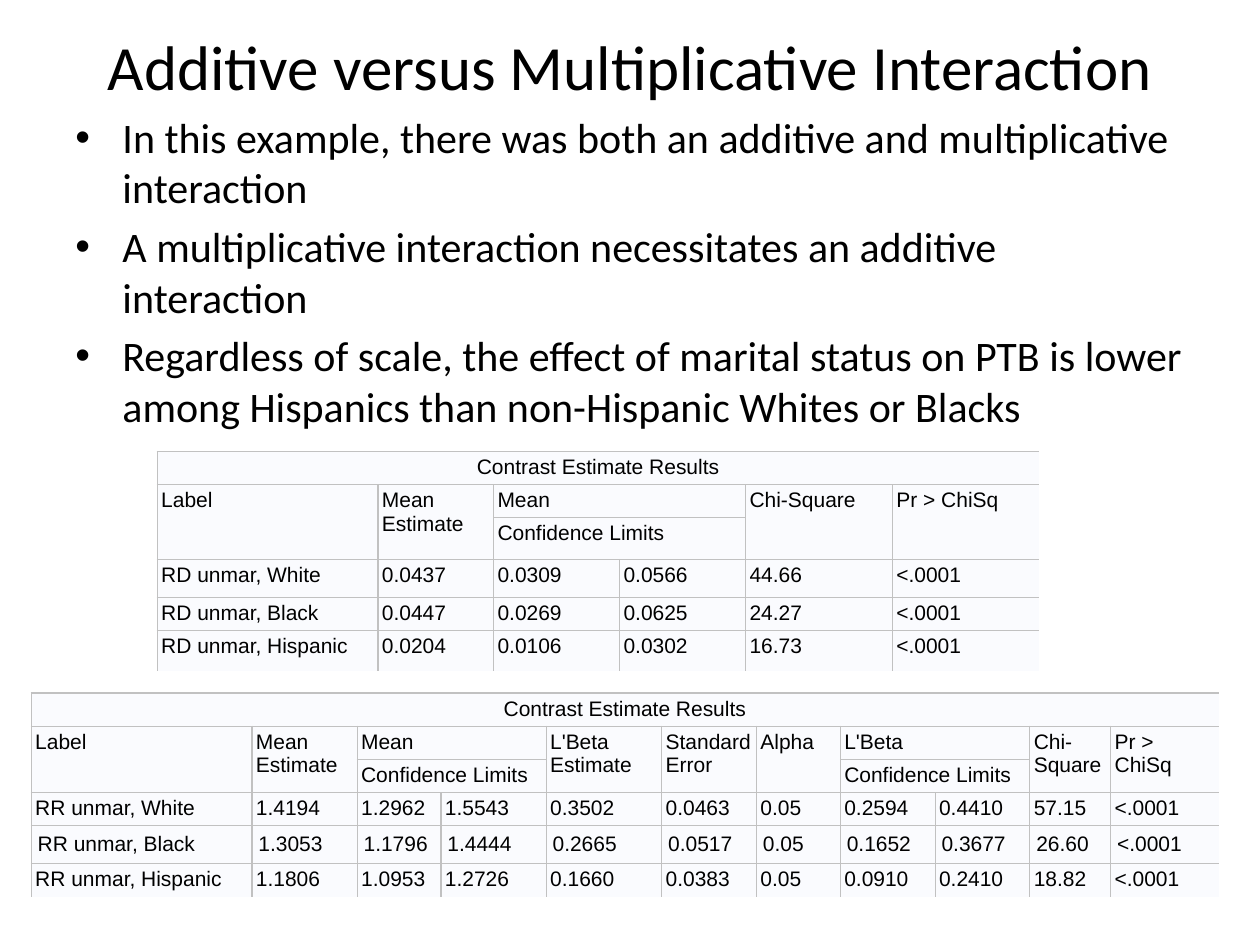
"""Build the slide on additive versus multiplicative interaction."""
from dataclasses import dataclass

from lxml.etree import SubElement
from pptx import Presentation
from pptx.dml.color import RGBColor as Rgb
from pptx.enum.text import PP_ALIGN as Align
from pptx.oxml.ns import qn
from pptx.util import Cm, Pt


@dataclass(frozen=True)
class Theme:
    """Colours, fonts and type sizes of the slide."""
    ink: str = "000000"
    cell: str = "FAFBFE"
    rule: str = "C1C1C1"
    rule_width: float = 0.75
    prose_font: str = "Calibri"
    table_font: str = "Arial"
    title_size: int = 36
    bullet_size: int = 24
    table_size: int = 12


@dataclass(frozen=True)
class Heading:
    """A column heading, with confidence limits below it if it spans two columns."""
    name: str
    columns: int = 1


@dataclass(frozen=True)
class Results:
    """A table of contrast estimates, with lengths in centimetres."""
    left: float
    top: float
    widths: tuple[float, ...]
    heights: tuple[float, ...]
    headings: tuple[Heading, ...]
    estimates: tuple[tuple[str, ...], ...]
    roomy_row: int | None = None


THEME = Theme()
TITLE = "Additive versus Multiplicative Interaction"
BULLETS = (
    "In this example, there was both an additive and multiplicative interaction",
    "A multiplicative interaction necessitates an additive interaction",
    "Regardless of scale, the effect of marital status on PTB is lower "
    "among Hispanics than non-Hispanic Whites or Blacks",
)
CAPTION = "Contrast Estimate Results"
LIMITS = "Confidence Limits"
HANGING = Cm(0.95)
INSET, ROOMY_INSET = Cm(0.08), Cm(0.13)

LABEL = Heading("Label")
ESTIMATE = Heading("Mean Estimate")
MEAN = Heading("Mean", 2)
CHI_SQUARE = Heading("Chi-Square")
P_VALUE = Heading("Pr > ChiSq")

RISK_RATIOS = Results(
    0.63, 13.97,
    (4.45, 2.12, 1.69, 2.12, 2.33, 1.91, 1.69, 1.91, 1.91, 1.63, 2.18),
    (0.64, 0.64, 0.56, 0.66, 0.64, 0.64),
    (LABEL, ESTIMATE, MEAN, Heading("L'Beta Estimate"), Heading("Standard Error"),
     Heading("Alpha"), Heading("L'Beta", 2), CHI_SQUARE, P_VALUE),
    (
        ("RR unmar, White", "1.4194", "1.2962", "1.5543", "0.3502", "0.0463",
         "0.05", "0.2594", "0.4410", "57.15", "<.0001"),
        ("RR unmar, Black", "1.3053", "1.1796", "1.4444", "0.2665", "0.0517",
         "0.05", "0.1652", "0.3677", "26.60", "<.0001"),
        ("RR unmar, Hispanic", "1.1806", "1.0953", "1.2726", "0.1660", "0.0383",
         "0.05", "0.0910", "0.2410", "18.82", "<.0001"),
    ),
    roomy_row=4,
)
RISK_DIFFERENCES = Results(
    3.17, 9.1,
    (4.45, 2.33, 2.54, 2.54, 2.96, 2.96),
    (0.46, 0.66, 0.84, 0.77, 0.64, 0.81),
    (LABEL, ESTIMATE, MEAN, CHI_SQUARE, P_VALUE),
    (
        ("RD unmar, White", "0.0437", "0.0309", "0.0566", "44.66", "<.0001"),
        ("RD unmar, Black", "0.0447", "0.0269", "0.0625", "24.27", "<.0001"),
        ("RD unmar, Hispanic", "0.0204", "0.0106", "0.0302", "16.73", "<.0001"),
    ),
)


def style_runs(paragraph, font: str, size: int) -> None:
    """Give every run of a paragraph its font, size and colour."""
    for run in paragraph.runs:
        run.font.name = font
        run.font.size = Pt(size)
        run.font.color.rgb = Rgb.from_string(THEME.ink)


def hang(paragraph, bullet: str | None = None) -> None:
    """Indent a paragraph with a hanging first line and an optional bullet."""
    properties = paragraph._p.get_or_add_pPr()
    properties.set("marL", str(HANGING))
    properties.set("indent", str(-HANGING))
    if bullet:
        SubElement(properties, qn("a:buFont"), typeface="Arial")
        SubElement(properties, qn("a:buChar"), char=bullet)


def add_prose(slide) -> None:
    """Add the title line and the bullets below it."""
    frame = slide.shapes.add_textbox(Cm(1.27), Cm(0.43), Cm(22.86), Cm(16.59)).text_frame
    frame.word_wrap = True
    title = frame.paragraphs[0]
    title.text = TITLE
    title.alignment = Align.CENTER
    hang(title)
    style_runs(title, THEME.prose_font, THEME.title_size)
    for statement in BULLETS:
        point = frame.add_paragraph()
        point.text = statement
        point.space_before = Pt(THEME.bullet_size * 0.2)
        hang(point, "•")
        style_runs(point, THEME.prose_font, THEME.bullet_size)


def rule_cell(cell, open_sides: set[str]) -> None:
    """Draw the rules around a cell, leaving the open sides bare."""
    properties = cell._tc.get_or_add_tcPr()
    for side in "LRTB":
        line = SubElement(properties, qn(f"a:ln{side}"), w=str(Pt(THEME.rule_width)))
        if side in open_sides:
            SubElement(line, qn("a:noFill"))
        else:
            fill = SubElement(line, qn("a:solidFill"))
            SubElement(fill, qn("a:srgbClr"), val=THEME.rule)


def fill_headings(grid, headings: tuple[Heading, ...]) -> None:
    """Write the caption and headings and merge the cells they cover."""
    grid.cell(0, 0).merge(grid.cell(0, len(grid.columns) - 1))
    grid.cell(0, 0).text = CAPTION
    grid.cell(0, 0).text_frame.paragraphs[0].alignment = Align.CENTER
    column = 0
    for heading in headings:
        last = column + heading.columns - 1
        if heading.columns > 1:
            for row in (1, 2):
                grid.cell(row, column).merge(grid.cell(row, last))
            grid.cell(2, column).text = LIMITS
        else:
            grid.cell(1, column).merge(grid.cell(2, column))
        grid.cell(1, column).text = heading.name
        column = last + 1


def style_cell(cell, inset: int, open_sides: set[str]) -> None:
    """Set the insets, rules, fill and type of a cell."""
    cell.margin_left = cell.margin_right = inset
    cell.margin_top = cell.margin_bottom = inset
    rule_cell(cell, open_sides)
    cell.fill.solid()
    cell.fill.fore_color.rgb = Rgb.from_string(THEME.cell)
    for paragraph in cell.text_frame.paragraphs:
        paragraph.font.size = Pt(THEME.table_size)
        style_runs(paragraph, THEME.table_font, THEME.table_size)


def add_results(slide, results: Results) -> None:
    """Add one table of contrast estimates."""
    rows, columns = len(results.heights), len(results.widths)
    grid = slide.shapes.add_table(
        rows, columns, Cm(results.left), Cm(results.top),
        Cm(sum(results.widths)), Cm(sum(results.heights))).table
    grid.first_row = grid.horz_banding = False
    for column, width in zip(grid.columns, results.widths):
        column.width = Cm(width)
    for row, height in zip(grid.rows, results.heights):
        row.height = Cm(height)
    fill_headings(grid, results.headings)
    for r, estimate in enumerate(results.estimates, start=3):
        for c, value in enumerate(estimate):
            grid.cell(r, c).text = value
    for r in range(rows):
        for c in range(columns):
            cell = grid.cell(r, c)
            reach = c + (cell.span_width if cell.is_merge_origin else 1)
            open_sides = {"R"} if reach == columns else set()
            if r == rows - 1:
                open_sides.add("B")
            style_cell(cell, ROOMY_INSET if r == results.roomy_row else INSET, open_sides)


def main() -> None:
    """Build and save the slide."""
    deck = Presentation()
    deck.slide_width, deck.slide_height = Cm(25.4), Cm(19.05)
    slide = deck.slides.add_slide(deck.slide_layouts[6])
    add_prose(slide)
    for results in (RISK_RATIOS, RISK_DIFFERENCES):
        add_results(slide, results)
    deck.save("out.pptx")


if __name__ == "__main__":
    main()
